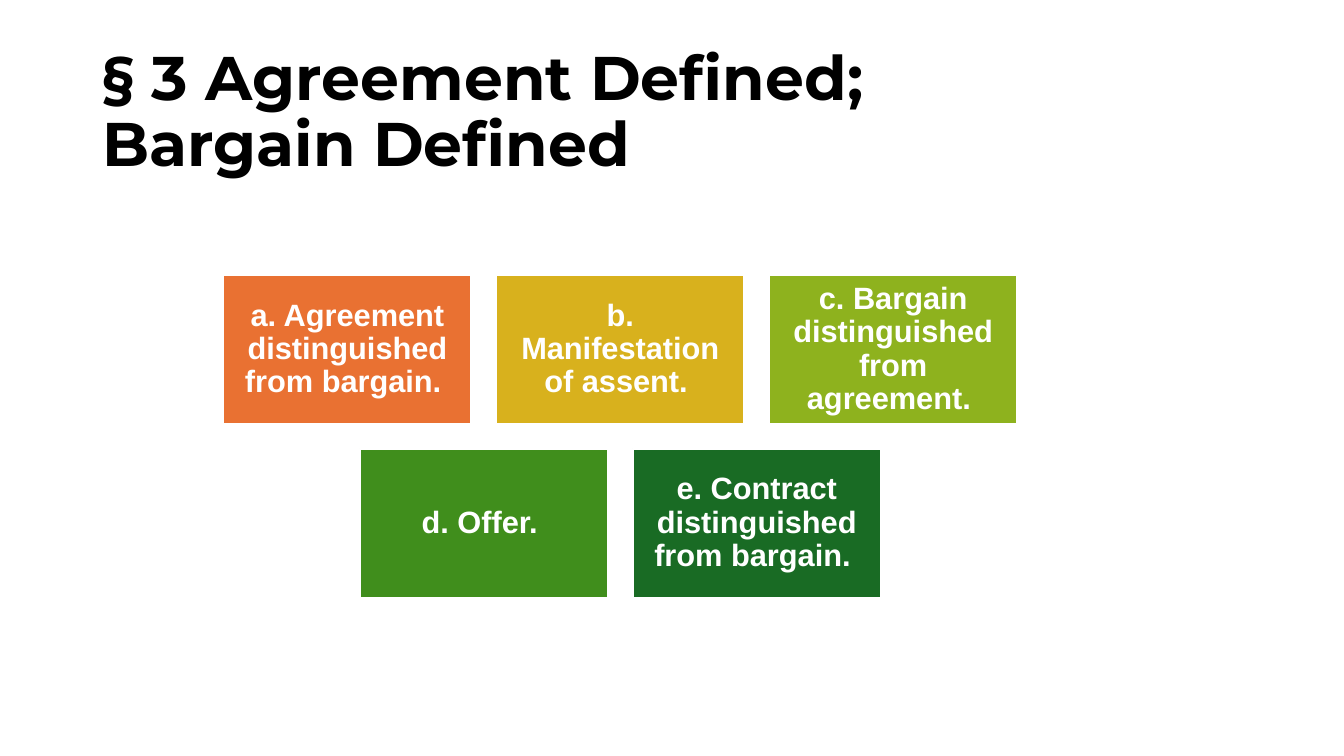
import pptx
import pptx.util
import pptx.dml.color
import pptx.enum.shapes
import pptx.enum.text

Pt = pptx.util.Pt
RGB = pptx.dml.color.RGBColor.from_string

TITLE = "§ 3 Agreement Defined; \vBargain Defined"
ROWS = [
    [
        ("a. Agreement distinguished from bargain. ", "E97132"),
        ("b. Manifestation of assent. ", "D8B11D"),
        ("c. Bargain distinguished from agreement. ", "8EB21E"),
    ],
    [
        ("d. Offer. ", "408E1C"),
        ("e. Contract distinguished from bargain. ", "196B24"),
    ],
]
THEME = {
    "title": ("Montserrat", 44, "000000"),
    "box": ("Arial", 22, "FFFFFF"),
    "line": "FFFFFF",
}
BOX_W, BOX_H, GAP = 177.2, 106.3, 17.7
CENTER_X, TOP = 443.1, 196.6
INSET = 6.6


def set_text(sp, text, style, align):
    tf = sp.text_frame
    tf.word_wrap = True
    tf.vertical_anchor = pptx.enum.text.MSO_ANCHOR.MIDDLE
    tf.text = text
    p = tf.paragraphs[0]
    p.alignment = align
    p.line_spacing = 0.9
    name, size, color = THEME[style]
    p.font.name = name
    p.font.size = Pt(size)
    p.font.bold = True
    p.font.color.rgb = RGB(color)
    return tf


def add_box(s, x, y, text, fill):
    sp = s.shapes.add_shape(
        pptx.enum.shapes.MSO_SHAPE.RECTANGLE, Pt(x), Pt(y), Pt(BOX_W), Pt(BOX_H)
    )
    sp.shadow.inherit = False
    sp.fill.solid()
    sp.fill.fore_color.rgb = RGB(fill)
    sp.line.color.rgb = RGB(THEME["line"])
    sp.line.width = Pt(1.5)
    tf = set_text(sp, text, "box", pptx.enum.text.PP_ALIGN.CENTER)
    tf.margin_left = tf.margin_right = tf.margin_top = tf.margin_bottom = Pt(INSET)


def main():
    prs = pptx.Presentation()
    prs.slide_width, prs.slide_height = Pt(960), Pt(540)
    s = prs.slides.add_slide(prs.slide_layouts[6])
    title = s.shapes.add_textbox(Pt(66), Pt(28.8), Pt(828), Pt(104.4))
    set_text(title, TITLE, "title", pptx.enum.text.PP_ALIGN.LEFT)
    for i, row in enumerate(ROWS):
        row_w = len(row) * (BOX_W + GAP) - GAP
        for j, (text, fill) in enumerate(row):
            x = CENTER_X - row_w / 2 + j * (BOX_W + GAP)
            add_box(s, x, TOP + i * (BOX_H + GAP), text, fill)
    prs.save("out.pptx")


if __name__ == "__main__":
    main()
